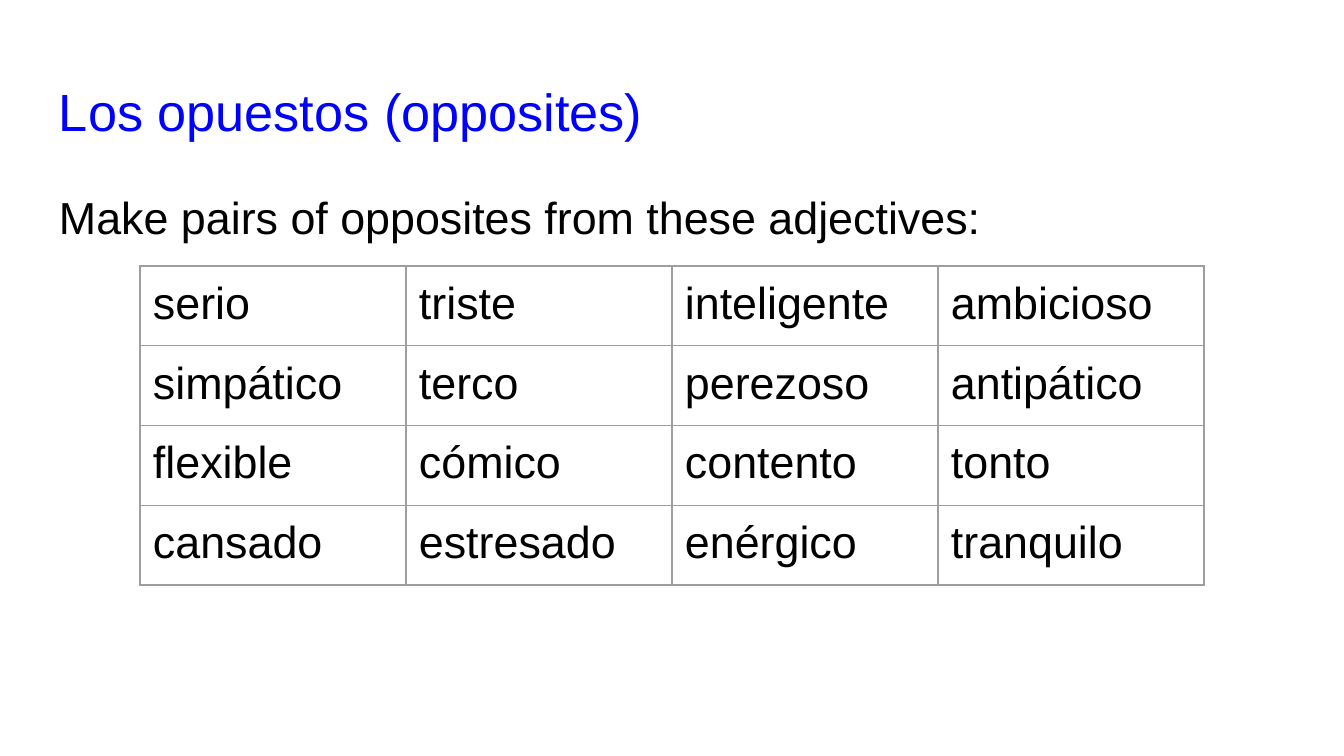
from pptx import Presentation
from pptx.dml.color import RGBColor
from pptx.enum.text import MSO_ANCHOR
from pptx.oxml import parse_xml
from pptx.oxml.ns import nsdecls
from pptx.util import Inches, Pt

TOP = MSO_ANCHOR.TOP
SLIDE_W, SLIDE_H = 1344, 756
SCALE = Inches(10) / SLIDE_W
INSET = 13
BLUE, BLACK, WHITE, GREY = "0000FF", "000000", "FFFFFF", "9E9E9E"

ADJECTIVES = [
    ["serio", "triste", "inteligente", "ambicioso"],
    ["simpático", "terco", "perezoso", "antipático"],
    ["flexible", "cómico", "contento", "tonto"],
    ["cansado", "estresado", "enérgico", "tranquilo"],
]


def px(length):
    return round(length * SCALE)


def color(hex_text):
    return RGBColor.from_string(hex_text)


def write(frame, text, size=24, fill=BLACK, spacing=1.0, after=0):
    frame.word_wrap = True
    paragraph = frame.paragraphs[0]
    paragraph.line_spacing = spacing
    paragraph.space_after = Pt(after)
    run = paragraph.add_run()
    run.text = text
    run.font.name = "Arial"
    run.font.size = Pt(size)
    run.font.color.rgb = color(fill)


def set_margins(holder):
    """Apply the common inset to a text frame or a table cell."""
    holder.margin_left = holder.margin_right = px(INSET)
    holder.margin_top = holder.margin_bottom = px(INSET)
    holder.vertical_anchor = TOP


def add_text(slide, box, text, **text_format):
    frame = slide.shapes.add_textbox(*map(px, box)).text_frame
    set_margins(frame)
    write(frame, text, **text_format)


def add_borders(cell, line_color, width):
    properties = cell._tc.get_or_add_tcPr()
    for position, side in enumerate(("lnL", "lnR", "lnT", "lnB")):
        properties.insert(position, parse_xml(
            f'<a:{side} {nsdecls("a")} w="{Pt(width)}"><a:solidFill>'
            f'<a:srgbClr val="{line_color}"/></a:solidFill></a:{side}>'))


def add_adjective_table(slide, box, words):
    table = slide.shapes.add_table(
        len(words), len(words[0]), *map(px, box)).table
    table.first_row = table.horz_banding = False
    for r, row in enumerate(words):
        for c, word in enumerate(row):
            cell = table.cell(r, c)
            set_margins(cell)
            cell.fill.solid()
            cell.fill.fore_color.rgb = color(WHITE)
            add_borders(cell, GREY, 0.75)
            write(cell.text_frame, word)


def add_opposites_slide(presentation, box):
    slide = presentation.slides.add_slide(presentation.slide_layouts[6])
    left, top, width, height = box
    add_text(slide, (left, top, width, 85), "Los opuestos (opposites)",
             size=28, fill=BLUE)
    add_text(slide, (left, top + 103, width, height - 103),
             "Make pairs of opposites from these adjectives:",
             spacing=1.15, after=16)
    add_adjective_table(slide, (left + 94, top + 200, 1064, 308), ADJECTIVES)


def main():
    presentation = Presentation()
    presentation.slide_width = px(SLIDE_W)
    presentation.slide_height = px(SLIDE_H)
    add_opposites_slide(presentation, (46, 66, 1252, 606))
    presentation.save("out.pptx")


if __name__ == "__main__":
    main()
